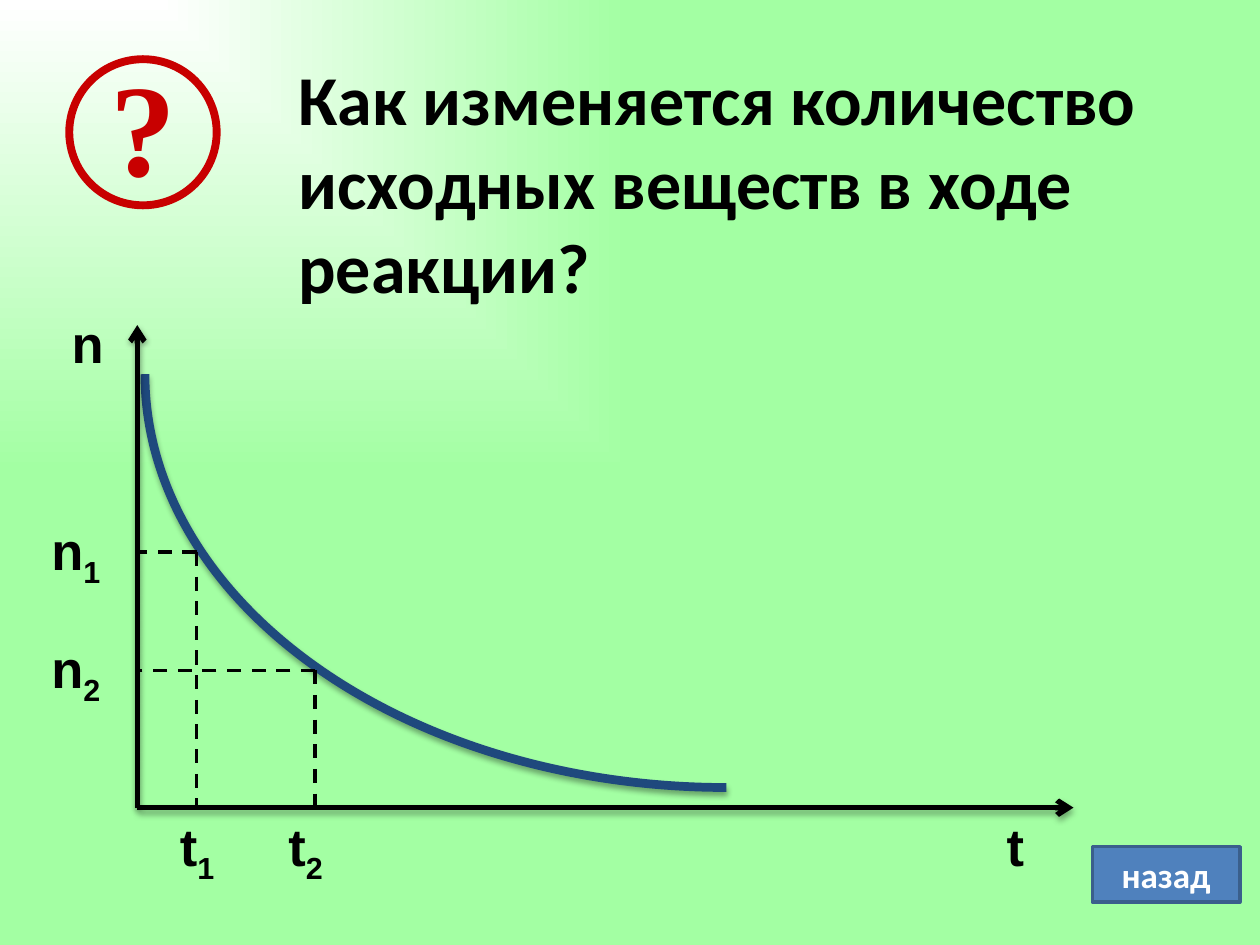
from dataclasses import dataclass

import pptx
import pptx.dml.color
import pptx.enum.dml
import pptx.enum.shapes
import pptx.enum.text
import pptx.oxml
import pptx.oxml.ns
import pptx.util
from pptx.util import Inches

COLORS = {
    "white": "FFFFFF",
    "green": "A3FFA3",
    "red": "C80000",
    "black": "000000",
    "curve": "1F497D",
    "button": "4F81BD",
    "button_border": "3A5F8C",
}
ORIGIN_X, ORIGIN_Y = 1.09, 6.41
LABEL_HEIGHT = 0.61
QUANTITY_LABEL_LEFT, QUANTITY_LABEL_RISE = 0.31, 0.32


@dataclass
class Label:
    text: str
    left: float
    top: float
    width: float
    subscript: str = ""


@dataclass
class Reading:
    """A point of the curve that is projected on both axes."""
    index: str
    time: float
    quantity: float
    label_left: float


LABELS = [Label("t", 7.89, ORIGIN_Y, 0.63), Label("n", 0.47, 2.42, 0.63)]
READINGS = [Reading("1", 1.56, 4.38, 1.33), Reading("2", 2.5, 5.32, 2.19)]


def rgb(name: str) -> pptx.dml.color.RGBColor:
    return pptx.dml.color.RGBColor.from_string(COLORS[name])


def set_background(slide) -> None:
    """Spread the gradient from the top left corner of the slide."""
    fill = slide.background.fill
    fill.gradient()
    for stop, position, color in zip(fill.gradient_stops, (0, 1), ("white", "green")):
        stop.position = position
        stop.color.rgb = rgb(color)
    linear = slide.element.find(".//" + pptx.oxml.ns.qn("a:lin"))
    linear.getparent().replace(linear, pptx.oxml.parse_xml(
        f'<a:path {pptx.oxml.ns.nsdecls("a")} path="rect">'
        '<a:fillToRect r="100000" b="100000"/></a:path>'))


def set_line(shape, color: str, width: float) -> None:
    shape.line.color.rgb = rgb(color)
    shape.line.width = pptx.util.Pt(width)


def set_effects(shape, shadow: bool) -> None:
    """Give the shape a soft shadow below, or no effect at all."""
    content = (
        '<a:outerShdw blurRad="40000" dist="23000" dir="5400000" rotWithShape="0">'
        '<a:srgbClr val="000000"><a:alpha val="35000"/></a:srgbClr></a:outerShdw>'
    ) if shadow else ""
    shape.element.spPr.append(pptx.oxml.parse_xml(
        f'<a:effectLst {pptx.oxml.ns.nsdecls("a")}>{content}</a:effectLst>'))


def set_font(paragraph, name: str, size: float, color: str) -> None:
    font = paragraph.font
    font.name = name
    font.size = pptx.util.Pt(size)
    font.bold = True
    font.color.rgb = rgb(color)


def add_text(slide, text: str, left: float, top: float, width: float, height: float,
             font_name: str, size: float, color: str = "black"):
    box = slide.shapes.add_textbox(Inches(left), Inches(top), Inches(width), Inches(height))
    box.text_frame.word_wrap = True
    box.text_frame.auto_size = pptx.enum.text.MSO_AUTO_SIZE.SHAPE_TO_FIT_TEXT
    paragraph = box.text_frame.paragraphs[0]
    paragraph.add_run().text = text
    set_font(paragraph, font_name, size, color)
    return paragraph


def add_label(slide, label: Label) -> None:
    paragraph = add_text(slide, label.text, label.left, label.top, label.width,
                         LABEL_HEIGHT, "Arial", 30)
    if label.subscript:
        run = paragraph.add_run()
        run.text = label.subscript
        run.font._element.set("baseline", "-25000")


def add_line(slide, start: tuple[float, float], end: tuple[float, float], width: float):
    line = slide.shapes.add_connector(
        pptx.enum.shapes.MSO_CONNECTOR.STRAIGHT,
        *(Inches(value) for value in (*start, *end)))
    set_line(line, "black", width)
    return line


def add_axis(slide, end: tuple[float, float]) -> None:
    axis = add_line(slide, (ORIGIN_X, ORIGIN_Y), end, 3)
    axis.line._get_or_add_ln().append(pptx.oxml.parse_xml(
        f'<a:tailEnd {pptx.oxml.ns.nsdecls("a")} type="arrow"/>'))
    set_effects(axis, shadow=True)


def add_guide(slide, start: tuple[float, float], end: tuple[float, float]) -> None:
    guide = add_line(slide, start, end, 2)
    guide.line.dash_style = pptx.enum.dml.MSO_LINE.DASH
    set_effects(guide, shadow=False)


def add_reading(slide, reading: Reading) -> None:
    point = (reading.time, reading.quantity)
    add_guide(slide, point, (ORIGIN_X, reading.quantity))
    add_guide(slide, point, (reading.time, ORIGIN_Y))
    add_label(slide, Label("n", QUANTITY_LABEL_LEFT,
                           reading.quantity - QUANTITY_LABEL_RISE, 0.86, reading.index))
    add_label(slide, Label("t", reading.label_left, ORIGIN_Y, 0.55, reading.index))


def add_question_mark(slide) -> None:
    ring = slide.shapes.add_shape(pptx.enum.shapes.MSO_SHAPE.OVAL, Inches(0.55),
                                  Inches(0.47), Inches(1.17), Inches(1.16))
    ring.fill.background()
    set_line(ring, "red", 4.5)
    ring.shadow.inherit = False
    paragraph = add_text(slide, "?", 0.78, 0.31, 0.7, 1.35, "Times New Roman", 75, "red")
    paragraph.space_before = pptx.util.Pt(9)


def add_curve(slide) -> None:
    curve = slide.shapes.add_shape(pptx.enum.shapes.MSO_SHAPE.ARC, Inches(1.15),
                                   Inches(-0.31), Inches(9.23), Inches(6.56))
    curve.rotation = 180
    curve.fill.background()
    set_line(curve, "curve", 5)
    set_effects(curve, shadow=True)


def add_back_button(slide) -> None:
    button = slide.shapes.add_shape(pptx.enum.shapes.MSO_SHAPE.RECTANGLE, Inches(8.67),
                                    Inches(6.72), Inches(1.17), Inches(0.44))
    button.fill.solid()
    button.fill.fore_color.rgb = rgb("button")
    set_line(button, "button_border", 2)
    button.shadow.inherit = False
    paragraph = button.text_frame.paragraphs[0]
    paragraph.text = "назад"
    paragraph.alignment = pptx.enum.text.PP_ALIGN.CENTER
    set_font(paragraph, "Calibri", 20, "white")


def main() -> None:
    presentation = pptx.Presentation()
    presentation.slide_width = Inches(10)
    presentation.slide_height = Inches(7.5)
    slide = presentation.slides.add_slide(presentation.slide_layouts[6])
    set_background(slide)
    add_text(slide, "Как изменяется количество исходных веществ в ходе реакции?",
             2.27, 0.39, 7.19, 2.12, "Calibri", 40)
    add_question_mark(slide)
    add_curve(slide)
    add_axis(slide, (ORIGIN_X, 2.58))
    add_axis(slide, (8.52, ORIGIN_Y))
    for label in LABELS:
        add_label(slide, label)
    for reading in READINGS:
        add_reading(slide, reading)
    add_back_button(slide)
    presentation.save("out.pptx")


if __name__ == "__main__":
    main()
